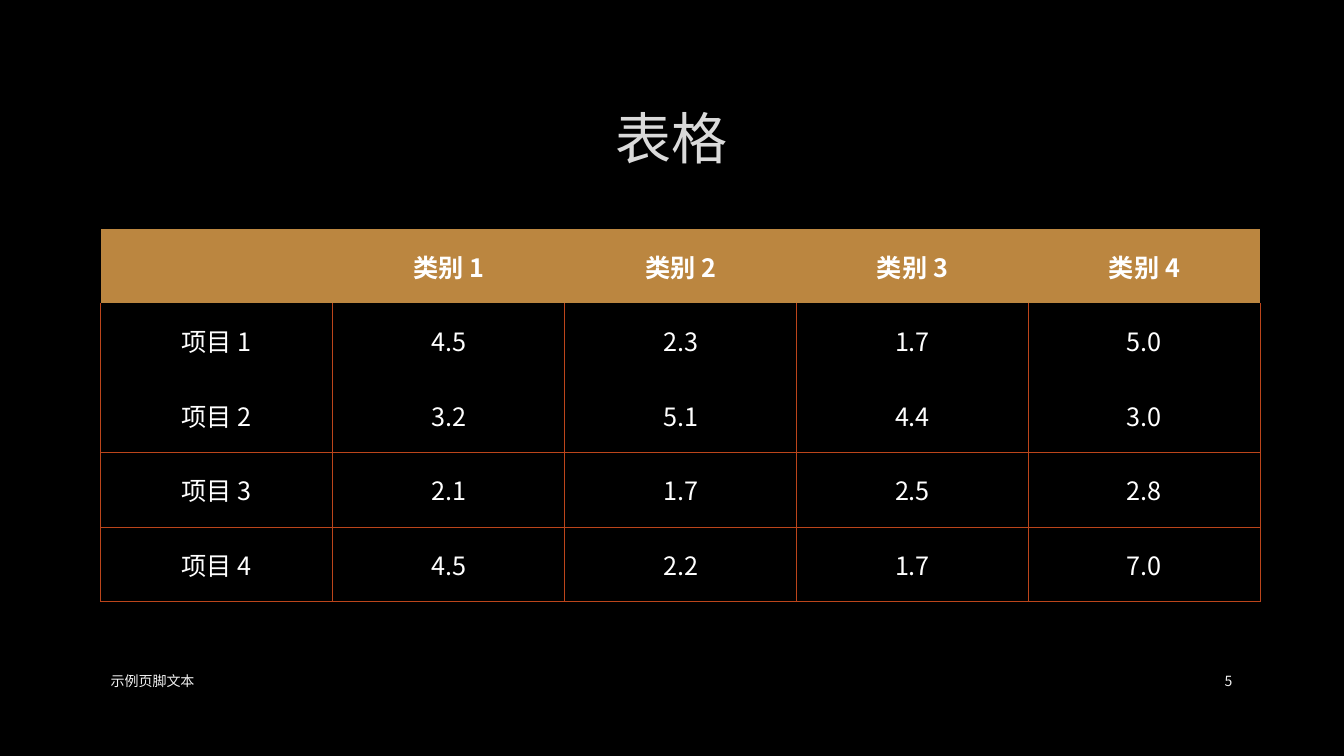
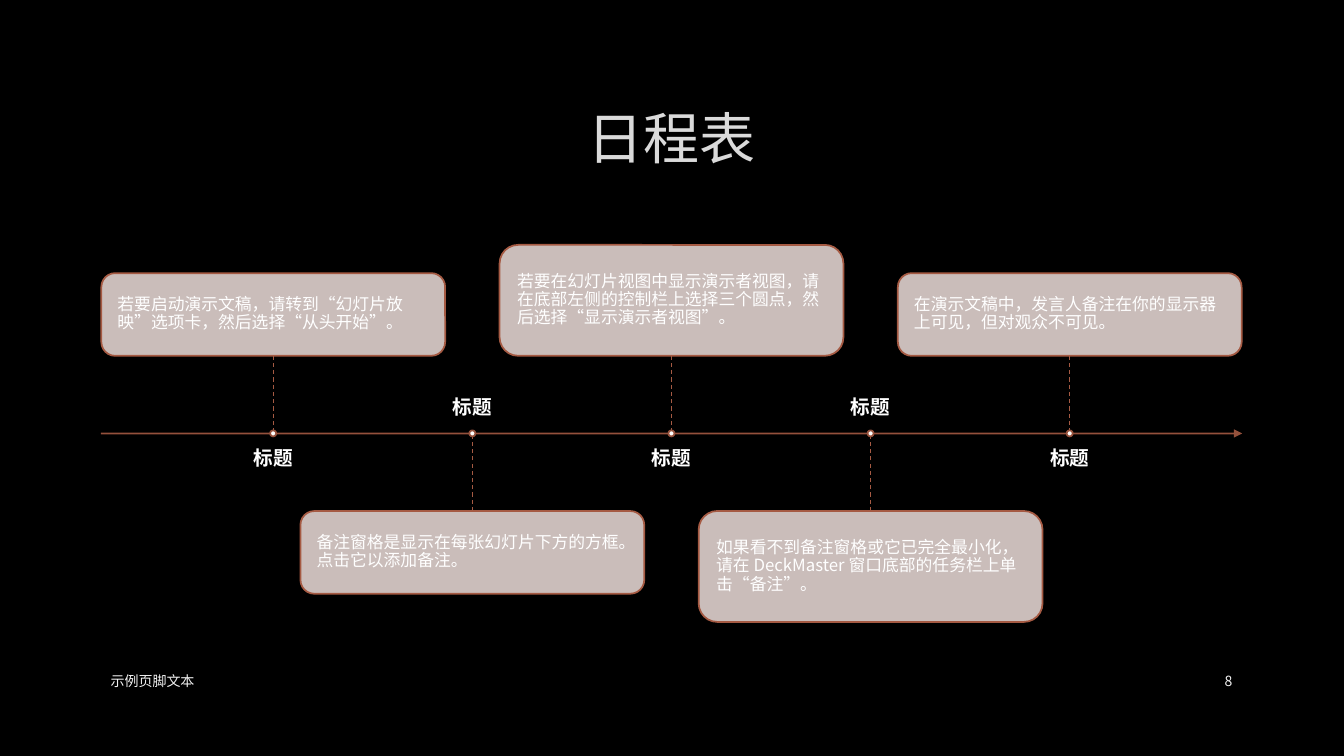
from pptx import Presentation
from pptx.dml.color import RGBColor
from pptx.enum.dml import MSO_LINE
from pptx.enum.shapes import MSO_CONNECTOR, MSO_SHAPE as Shape
from pptx.enum.text import MSO_ANCHOR as Anchor, MSO_AUTO_SIZE as AutoSize, PP_ALIGN as Align
from pptx.oxml.ns import qn
from pptx.util import Inches, Pt
from lxml.etree import Element, SubElement

FONT = "Noto Sans CJK SC"
COLORS = {
    "background": "000000", "title": "DADADA", "title_outline": "404040",
    "text": "FFFFFF", "footer": "F2F2F2", "header": "BB8640", "grid": "BC451B",
    "box": "E1D2CF", "accent": "A55A43", "dot_edge": "96523D",
}
FOOTER = "示例页脚文本"
TITLE_ONLY = 5

TABLE = [
    ["", "类别 1", "类别 2", "类别 3", "类别 4"],
    ["项目 1", "4.5", "2.3", "1.7", "5.0"],
    ["项目 2", "3.2", "5.1", "4.4", "3.0"],
    ["项目 3", "2.1", "1.7", "2.5", "2.8"],
    ["项目 4", "4.5", "2.2", "1.7", "7.0"],
]
COLUMN_WIDTH, ROW_HEIGHT = 2.3, 0.74

STEPS = [
    (0.82, "若要启动演示文稿，请转到“幻灯片放映”选项卡，然后选择“从头开始”。"),
    (0.82, "备注窗格是显示在每张幻灯片下方的方框。点击它以添加备注。"),
    (1.1, "若要在幻灯片视图中显示演示者视图，请在底部左侧的控制栏上选择三个圆点，然后选择“显示演示者视图”。"),
    (1.1, "如果看不到备注窗格或它已完全最小化，请在 DeckMaster 窗口底部的任务栏上单击“备注”。"),
    (0.82, "在演示文稿中，发言人备注在你的显示器上可见，但对观众不可见。"),
]
AXIS_LEFT, AXIS_RIGHT, AXIS_TOP = 1, 12.32, 4.3
FIRST_CENTER, LAST_CENTER = 2.71, 10.61
BOX_WIDTH, BOX_GAP, DOT_SIZE = 3.41, 0.77, 0.06
LABEL_WIDTH, LABEL_HEIGHT, LABEL_GAP = 3, 0.46, 0.15


def rgb(name):
    return RGBColor.from_string(COLORS[name])


def apply(target, **values):
    for name, value in values.items():
        setattr(target, name, value)


def set_alpha(fill, percent):
    SubElement(fill.find(qn("a:srgbClr")), qn("a:alpha"), val=str(percent * 1000))


def add_solid(parent, color):
    fill = SubElement(parent, qn("a:solidFill"))
    SubElement(fill, qn("a:srgbClr"), val=COLORS[color])
    return fill


class Designer:
    """Hold the shared style and the current slide, and draw elements on it."""

    def __init__(self):
        self.deck = Presentation()
        apply(self.deck, slide_width=Inches(13.33), slide_height=Inches(7.5))
        fill = self.deck.slide_master.background.fill
        fill.solid()
        fill.fore_color.rgb = rgb("background")

    def put_text(self, frame, text, size, color="text", bold=False, align=Align.LEFT, spacing=None):
        para = frame.paragraphs[0]
        apply(para, alignment=align, line_spacing=spacing)
        span = para.add_run()
        span.text = text
        apply(span.font, name=FONT, size=Pt(size), bold=bold)
        span.font.color.rgb = rgb(color)
        properties = span._r.get_or_add_rPr()
        SubElement(properties, qn("a:ea"), typeface=FONT)
        return properties

    def add_page(self, title, number):
        self.page = self.deck.slides.add_slide(self.deck.slide_layouts[TITLE_ONLY])
        box = self.page.shapes.title
        apply(box, left=Inches(1), top=Inches(0.67), width=Inches(11.32), height=Inches(1.38))
        apply(box.text_frame, vertical_anchor=Anchor.MIDDLE, auto_size=AutoSize.NONE, word_wrap=True)
        properties = self.put_text(box.text_frame, title, 40, "title", align=Align.CENTER)
        outline = Element(qn("a:ln"), w=str(Pt(0.75)))
        set_alpha(add_solid(outline, "title_outline"), 10)
        properties.insert(0, outline)
        self.add_text(FOOTER, 1, 6.56, 7.3, 0.4, size=10, color="footer")
        self.add_text(str(number), 11.5, 6.56, 0.82, 0.4, size=10, color="footer", align=Align.RIGHT)

    def add_text(self, text, left, top, width, height, anchor=Anchor.MIDDLE, inset=0.1, **style):
        box = self.page.shapes.add_textbox(Inches(left), Inches(top), Inches(width), Inches(height))
        self.set_frame(box.text_frame, anchor, inset)
        self.put_text(box.text_frame, text, **style)

    def set_frame(self, frame, anchor, inset):
        apply(frame, word_wrap=True, vertical_anchor=anchor)
        apply(frame, **{f"margin_{side}": Inches(inset) for side in ("left", "top", "right", "bottom")})

    def add_shape(self, kind, left, top, width, height, fill, edge):
        shape = self.page.shapes.add_shape(kind, Inches(left), Inches(top), Inches(width), Inches(height))
        shape.shadow.inherit = False
        shape.fill.solid()
        shape.fill.fore_color.rgb = rgb(fill)
        shape.line.color.rgb = rgb(edge)
        shape.line.width = Pt(1.25)
        return shape

    def add_card(self, text, left, top, width, height):
        card = self.add_shape(Shape.ROUNDED_RECTANGLE, left, top, width, height, "box", "accent")
        set_alpha(card.element.spPr.find(qn("a:solidFill")), 90)
        self.set_frame(card.text_frame, Anchor.MIDDLE, 0.12)
        self.put_text(card.text_frame, text, 12, spacing=0.9)
        return card

    def add_line(self, start, end, width):
        points = [Inches(value) for value in (*start, *end)]
        line = self.page.shapes.add_connector(MSO_CONNECTOR.STRAIGHT, *points)
        line.line.color.rgb = rgb("accent")
        line.line.width = Pt(width)
        SubElement(line.element.spPr, qn("a:effectLst"))
        return line

    def add_axis(self):
        axis = self.add_line((AXIS_LEFT, AXIS_TOP), (AXIS_RIGHT, AXIS_TOP), 1.25)
        outline = axis.element.spPr.find(qn("a:ln"))
        set_alpha(outline.find(qn("a:solidFill")), 90)
        SubElement(outline, qn("a:tailEnd"), type="triangle")

    def add_step(self, text, center, height, above):
        top = AXIS_TOP - BOX_GAP - height if above else AXIS_TOP + BOX_GAP
        card = self.add_card(text, center - BOX_WIDTH / 2, top, BOX_WIDTH, height)
        stem = self.add_line((center, top), (center, AXIS_TOP), 0.75)
        stem.line.dash_style = MSO_LINE.DASH
        stem.begin_connect(card, 2 if above else 0)
        self.add_shape(Shape.OVAL, center - DOT_SIZE / 2, AXIS_TOP - DOT_SIZE / 2,
                       DOT_SIZE, DOT_SIZE, "text", "dot_edge")
        label_top = AXIS_TOP + LABEL_GAP if above else AXIS_TOP - LABEL_GAP - LABEL_HEIGHT
        self.add_text("标题", center - LABEL_WIDTH / 2, label_top, LABEL_WIDTH, LABEL_HEIGHT,
                      anchor=Anchor.TOP if above else Anchor.BOTTOM, inset=0,
                      size=14, bold=True, align=Align.CENTER, spacing=0.9)

    def set_borders(self, cell, shown):
        properties = cell._tc.get_or_add_tcPr()
        for index, side in enumerate("LRTB"):
            border = Element(qn(f"a:ln{side}"), w=str(Pt(1)))
            if side in shown:
                add_solid(border, "grid")
            else:
                SubElement(border, qn("a:noFill"))
            properties.insert(index, border)

    def add_table(self, rows, left, top):
        count = len(rows[0])
        table = self.page.shapes.add_table(
            len(rows), count, Inches(left), Inches(top),
            Inches(COLUMN_WIDTH * count), Inches(ROW_HEIGHT * len(rows))).table
        table.horz_banding = False
        for row, values in enumerate(rows):
            header = row == 0
            shown = "" if header else "LR" + "T" * (row > 2) + "B" * (row > 1)
            for column, value in enumerate(values):
                cell = table.cell(row, column)
                cell.vertical_anchor = Anchor.MIDDLE
                if header:
                    cell.fill.solid()
                    cell.fill.fore_color.rgb = rgb("header")
                else:
                    cell.fill.background()
                self.set_borders(cell, shown)
                if value:
                    self.put_text(cell.text_frame, value, 18, bold=header, align=Align.CENTER)


def main():
    designer = Designer()
    designer.add_page("表格", 5)
    designer.add_table(TABLE, 1, 2.27)

    designer.add_page("日程表", 8)
    designer.add_axis()
    pitch = (LAST_CENTER - FIRST_CENTER) / (len(STEPS) - 1)
    for index, (height, text) in enumerate(STEPS):
        designer.add_step(text, FIRST_CENTER + index * pitch, height, above=index % 2 == 0)
    designer.deck.save("out.pptx")


if __name__ == "__main__":
    main()
